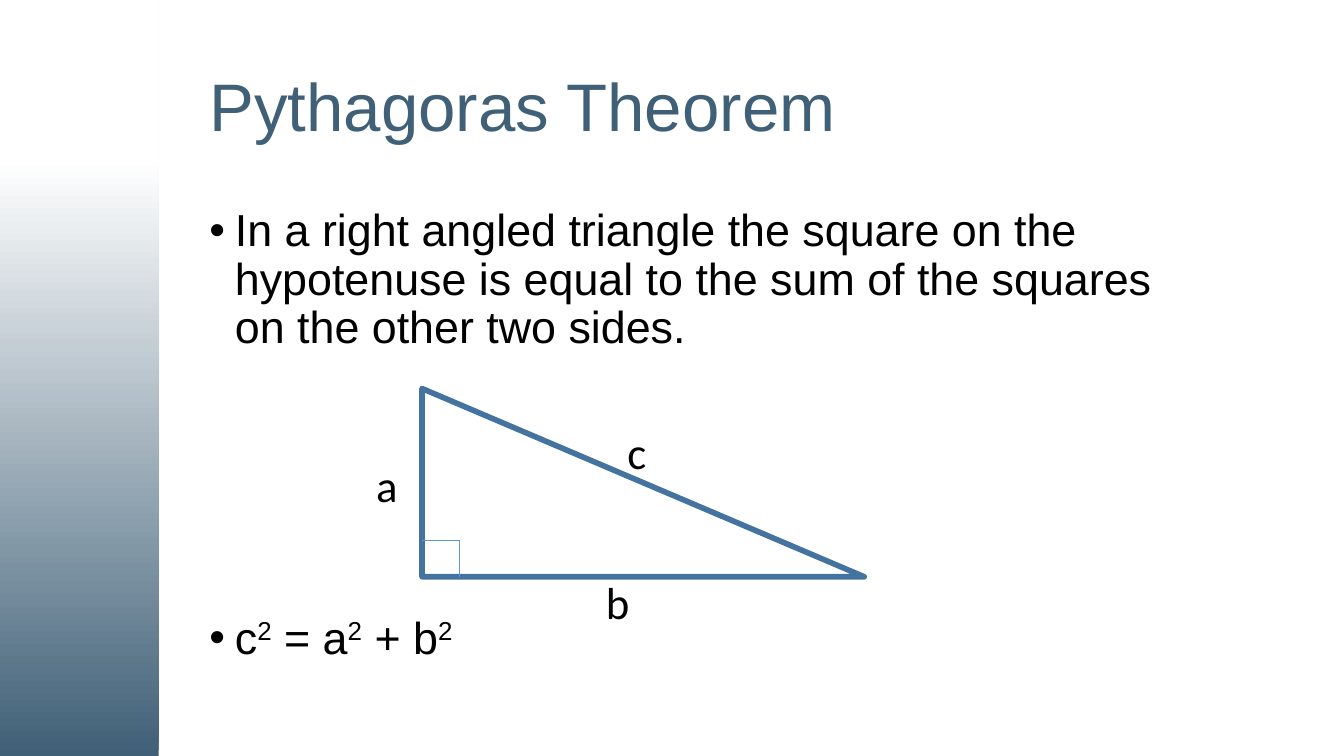
from dataclasses import dataclass

from lxml.etree import SubElement
from pptx import Presentation
from pptx.dml.color import RGBColor
from pptx.enum.shapes import MSO_CONNECTOR, MSO_SHAPE
from pptx.enum.text import MSO_ANCHOR
from pptx.oxml.ns import qn
from pptx.util import Emu, Inches, Pt

COLOURS = {
    "slate": "406077",
    "white": "FFFFFF",
    "black": "000000",
    "triangle": "43739E",
    "angle": "5B9BD5",
}
WIDTH, HEIGHT = Inches(10), Inches(5.625)
SUPERSCRIPT = "30000"
BULLET_INDENT = Inches(0.19)


@dataclass(frozen=True)
class Area:
    """A rectangle in percent of the slide's width and height."""
    left: float
    top: float
    width: float
    height: float

    @property
    def right(self) -> float:
        return self.left + self.width

    @property
    def bottom(self) -> float:
        return self.top + self.height

    def emu(self) -> tuple[Emu, Emu, Emu, Emu]:
        return across(self.left), down(self.top), across(self.width), down(self.height)


@dataclass(frozen=True)
class SideLabel:
    letter: str
    left: float
    top: float


SIDEBAR = Area(0, 0, 11.8, 100)
TITLE = Area(14.6, 5.33, 72.3, 18.31)
BODY = Area(14.6, 26.67, 72.3, 65.6)
TRIANGLE = Area(31.4, 51.4, 32.9, 24.9)
ANGLE_WIDTH, ANGLE_HEIGHT = 2.8, 4.8
LABEL_WIDTH, LABEL_HEIGHT = 3.2, 8.89
SIDE_LABELS = [
    SideLabel("c", 45.7, 55.29),
    SideLabel("b", 44.1, 75.2),
    SideLabel("a", 27, 59.73),
]
THEOREM = (
    "In a right angled triangle the square on the hypotenuse is equal to "
    "the sum of the squares on the other two sides."
)
SQUARED_TERMS = ["c", " = a", " + b"]


def across(percent: float) -> Emu:
    return Emu(round(WIDTH * percent / 100))


def down(percent: float) -> Emu:
    return Emu(round(HEIGHT * percent / 100))


def rgb(name: str) -> RGBColor:
    return RGBColor.from_string(COLOURS[name])


def set_font(paragraph, size: float, colour: str, face: str = "Arial") -> None:
    paragraph.font.size = Pt(size)
    paragraph.font.name = face
    paragraph.font.color.rgb = rgb(colour)


def add_text_frame(slide, area: Area):
    frame = slide.shapes.add_textbox(*area.emu()).text_frame
    frame.word_wrap = True
    return frame


def add_bullet(paragraph) -> None:
    properties = paragraph._p.get_or_add_pPr()
    properties.set("marL", str(BULLET_INDENT))
    properties.set("indent", str(-BULLET_INDENT))
    SubElement(properties, qn("a:buFont"), typeface="Arial")
    SubElement(properties, qn("a:buChar"), char="•")
    paragraph.line_spacing = 0.9
    set_font(paragraph, 24, "black")


def draw_sidebar(slide) -> None:
    sidebar = slide.shapes.add_shape(MSO_SHAPE.RECTANGLE, *SIDEBAR.emu())
    sidebar.shadow.inherit = False
    sidebar.line.fill.background()
    sidebar.fill.gradient()
    sidebar.fill.gradient_angle = 90
    stops = [(0, "slate"), (0.79, "white")]
    for stop, (position, colour) in zip(sidebar.fill.gradient_stops, stops):
        stop.position = position
        stop.color.rgb = rgb(colour)


def draw_title(slide) -> None:
    frame = add_text_frame(slide, TITLE)
    frame.vertical_anchor = MSO_ANCHOR.MIDDLE
    title = frame.paragraphs[0]
    title.text = "Pythagoras Theorem"
    title.line_spacing = 0.9
    set_font(title, 36, "slate")


def draw_body(slide) -> None:
    frame = add_text_frame(slide, BODY)
    theorem = frame.paragraphs[0]
    theorem.text = THEOREM
    add_bullet(theorem)

    formula = frame.add_paragraph()
    add_bullet(formula)
    formula.space_before = Pt(140.5)
    for term in SQUARED_TERMS:
        formula.add_run().text = term
        exponent = formula.add_run()
        exponent.text = "2"
        exponent.font._element.set("baseline", SUPERSCRIPT)


def draw_triangle(slide) -> None:
    triangle = slide.shapes.add_shape(MSO_SHAPE.RIGHT_TRIANGLE, *TRIANGLE.emu())
    triangle.shadow.inherit = False
    triangle.fill.background()
    triangle.line.color.rgb = rgb("triangle")
    triangle.line.width = Pt(3)


def draw_side_label(slide, label: SideLabel) -> None:
    area = Area(label.left, label.top, LABEL_WIDTH, LABEL_HEIGHT)
    letter = add_text_frame(slide, area).paragraphs[0]
    letter.text = label.letter
    set_font(letter, 24, "black", "Calibri")


def draw_right_angle(slide) -> None:
    right, top = TRIANGLE.left + ANGLE_WIDTH, TRIANGLE.bottom - ANGLE_HEIGHT
    corners = [(TRIANGLE.left, top), (right, top), (right, TRIANGLE.bottom)]
    for start, end in zip(corners, corners[1:]):
        edge = slide.shapes.add_connector(
            MSO_CONNECTOR.STRAIGHT,
            across(start[0]), down(start[1]), across(end[0]), down(end[1]),
        )
        edge.line.color.rgb = rgb("angle")
        edge.line.width = Pt(0.5)
        SubElement(edge._element.spPr, qn("a:effectLst"))


def main() -> None:
    presentation = Presentation()
    presentation.slide_width, presentation.slide_height = WIDTH, HEIGHT
    slide = presentation.slides.add_slide(presentation.slide_layouts[6])
    draw_sidebar(slide)
    draw_title(slide)
    draw_body(slide)
    draw_triangle(slide)
    for label in SIDE_LABELS:
        draw_side_label(slide, label)
    draw_right_angle(slide)
    presentation.save("out.pptx")


if __name__ == "__main__":
    main()
